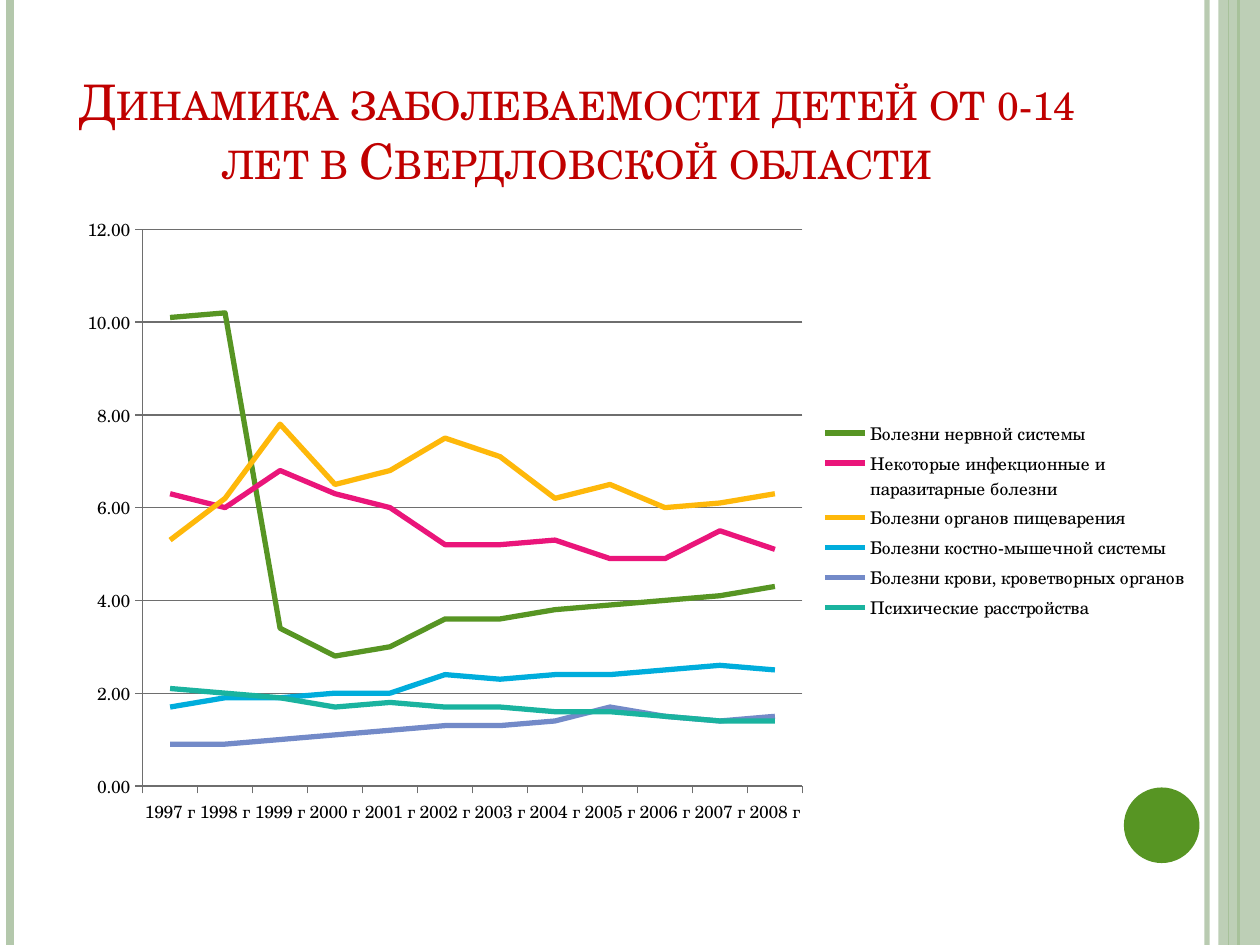
"""Build a slide charting childhood illness in the Sverdlovsk region from 1997 to 2008."""
from dataclasses import dataclass

from lxml.etree import SubElement
from pptx import Presentation
from pptx.chart.chart import Chart
from pptx.chart.data import CategoryChartData
from pptx.dml.color import RGBColor
from pptx.enum.chart import XL_CHART_TYPE as ChartType
from pptx.enum.chart import XL_LEGEND_POSITION as LegendPosition
from pptx.enum.chart import XL_MARKER_STYLE as Marker
from pptx.enum.chart import XL_TICK_MARK as Tick
from pptx.enum.shapes import MSO_CONNECTOR as Connector
from pptx.enum.shapes import MSO_SHAPE as ShapeKind
from pptx.enum.text import MSO_ANCHOR as Anchor
from pptx.enum.text import PP_ALIGN as Align
from pptx.oxml import parse_xml
from pptx.oxml.ns import nsdecls, qn
from pptx.slide import Slide
from pptx.util import Inches, Pt

FONT = "TeX Gyre Schola"
COLORS = {
    "sage": "B4C8AC", "green": "579523", "title": "C00000", "text": "000000",
    "grid": "6E6E6E", "pink": "EA157A", "amber": "FEB80A", "cyan": "00ADDC",
    "blue": "738AC8", "teal": "1AB39F",
}


@dataclass
class Stripe:
    x: float
    color: str
    weight: float
    alpha: int = 100


@dataclass
class Block:
    kind: ShapeKind
    box: tuple[float, float, float, float]
    color: str
    alpha: int = 100


@dataclass
class Illness:
    name: str
    color: str
    values: list[float]


STRIPES = [
    Stripe(9.58, "sage", 3, 93),
    Stripe(0.08, "sage", 4.5),
    Stripe(9.83, "green", 1.5),
    Stripe(9.75, "green", 0.75),
]
BLOCKS = [
    Block(ShapeKind.RECTANGLE, (9.67, 0, 0.33, 7.5), "sage", 87),
    Block(ShapeKind.OVAL, (8.92, 6.25, 0.6, 0.6), "green"),
]
ILLNESSES = [
    Illness("Болезни нервной системы", "green",
            [10.1, 10.2, 3.4, 2.8, 3, 3.6, 3.6, 3.8, 3.9, 4, 4.1, 4.3]),
    Illness("Некоторые инфекционные и паразитарные болезни", "pink",
            [6.3, 6, 6.8, 6.3, 6, 5.2, 5.2, 5.3, 4.9, 4.9, 5.5, 5.1]),
    Illness("Болезни органов пищеварения", "amber",
            [5.3, 6.2, 7.8, 6.5, 6.8, 7.5, 7.1, 6.2, 6.5, 6, 6.1, 6.3]),
    Illness("Болезни костно-мышечной системы", "cyan",
            [1.7, 1.9, 1.9, 2, 2, 2.4, 2.3, 2.4, 2.4, 2.5, 2.6, 2.5]),
    Illness("Болезни крови, кроветворных органов", "blue",
            [0.9, 0.9, 1, 1.1, 1.2, 1.3, 1.3, 1.4, 1.7, 1.5, 1.4, 1.5]),
    Illness("Психические расстройства", "teal",
            [2.1, 2, 1.9, 1.7, 1.8, 1.7, 1.7, 1.6, 1.6, 1.5, 1.4, 1.4]),
]


def color_of(name: str) -> RGBColor:
    return RGBColor.from_string(COLORS[name])


def set_alpha(fill, percent: int) -> None:
    color = fill._xPr.find(qn("a:solidFill"))[0]
    SubElement(color, qn("a:alpha"), val=str(percent * 1000))


def add_stripe(slide: Slide, stripe: Stripe) -> None:
    x = Inches(stripe.x)
    line = slide.shapes.add_connector(Connector.STRAIGHT, x, 0, x, Inches(7.5))
    line.line.width = Pt(stripe.weight)
    line.line.color.rgb = color_of(stripe.color)
    if stripe.alpha < 100:
        set_alpha(line.line.fill, stripe.alpha)
    SubElement(line._element.spPr, qn("a:effectLst"))


def add_block(slide: Slide, block: Block) -> None:
    shape = slide.shapes.add_shape(block.kind, *map(Inches, block.box))
    shape.shadow.inherit = False
    shape.fill.solid()
    shape.fill.fore_color.rgb = color_of(block.color)
    if block.alpha < 100:
        set_alpha(shape.fill, block.alpha)
    shape.line.fill.background()


def format_title(slide: Slide) -> None:
    title = slide.shapes.title
    title.left, title.top, title.width, title.height = map(Inches, (0.5, 0.3, 8.17, 1.25))
    frame = title.text_frame
    frame.text = "Динамика заболеваемости детей от 0-14 лет в Свердловской области"
    frame.word_wrap = True
    frame.vertical_anchor = Anchor.BOTTOM
    para = frame.paragraphs[0]
    para.alignment = Align.CENTER
    span = para.runs[0]
    span.font.name = FONT
    span.font.size = Pt(28)
    span.font.color.rgb = color_of("title")
    span._r.get_or_add_rPr().set("cap", "small")


def place_plot(chart: Chart, x: float, y: float, width: float, height: float) -> None:
    plot_area = chart._chartSpace.chart.plotArea
    for old in plot_area.findall(qn("c:layout")):
        plot_area.remove(old)
    sizes = "".join(f'<c:{tag} val="{value}"/>'
                    for tag, value in zip("xywh", (x, y, width, height)))
    plot_area.insert(0, parse_xml(
        f'<c:layout {nsdecls("c")}><c:manualLayout><c:layoutTarget val="inner"/>'
        f'<c:xMode val="edge"/><c:yMode val="edge"/>{sizes}</c:manualLayout></c:layout>'))


def format_axes(chart: Chart) -> None:
    values = chart.value_axis
    values.minimum_scale, values.maximum_scale, values.major_unit = 0, 12, 2
    values.tick_labels.number_format = "0.00"
    values.tick_labels.number_format_is_linked = False
    values.has_major_gridlines = True
    for axis in (chart.category_axis, values):
        axis.major_tick_mark = Tick.OUTSIDE
        axis.minor_tick_mark = Tick.NONE
    for owner in (chart.category_axis, values, values.major_gridlines):
        owner.format.line.color.rgb = color_of("grid")
        owner.format.line.width = Pt(0.75)


def add_illness_chart(slide: Slide) -> None:
    data = CategoryChartData(number_format="0.00")
    data.categories = [f"{year} г" for year in range(1997, 2009)]
    for illness in ILLNESSES:
        data.add_series(illness.name, illness.values)
    chart = slide.shapes.add_chart(
        ChartType.LINE, *map(Inches, (0.5, 1.62, 9.03, 5.02)), data).chart
    chart.has_title = False
    chart.font.name = FONT
    chart.font.size = Pt(10)
    chart.font.color.rgb = color_of("text")
    chart.has_legend = True
    chart.legend.position = LegendPosition.RIGHT
    chart.legend.include_in_layout = False
    chart.plots[0].vary_by_categories = False
    for series, illness in zip(chart.plots[0].series, ILLNESSES):
        series.smooth = False
        series.marker.style = Marker.NONE
        series.format.line.width = Pt(3)
        series.format.line.color.rgb = color_of(illness.color)
    format_axes(chart)
    place_plot(chart, 0.07, 0.04, 0.58, 0.88)


def main() -> None:
    deck = Presentation()
    deck.slide_width, deck.slide_height = Inches(10), Inches(7.5)
    page = deck.slides.add_slide(deck.slide_layouts[5])
    for stripe in STRIPES:
        add_stripe(page, stripe)
    for block in BLOCKS:
        add_block(page, block)
    format_title(page)
    add_illness_chart(page)
    deck.save("out.pptx")


if __name__ == "__main__":
    main()
